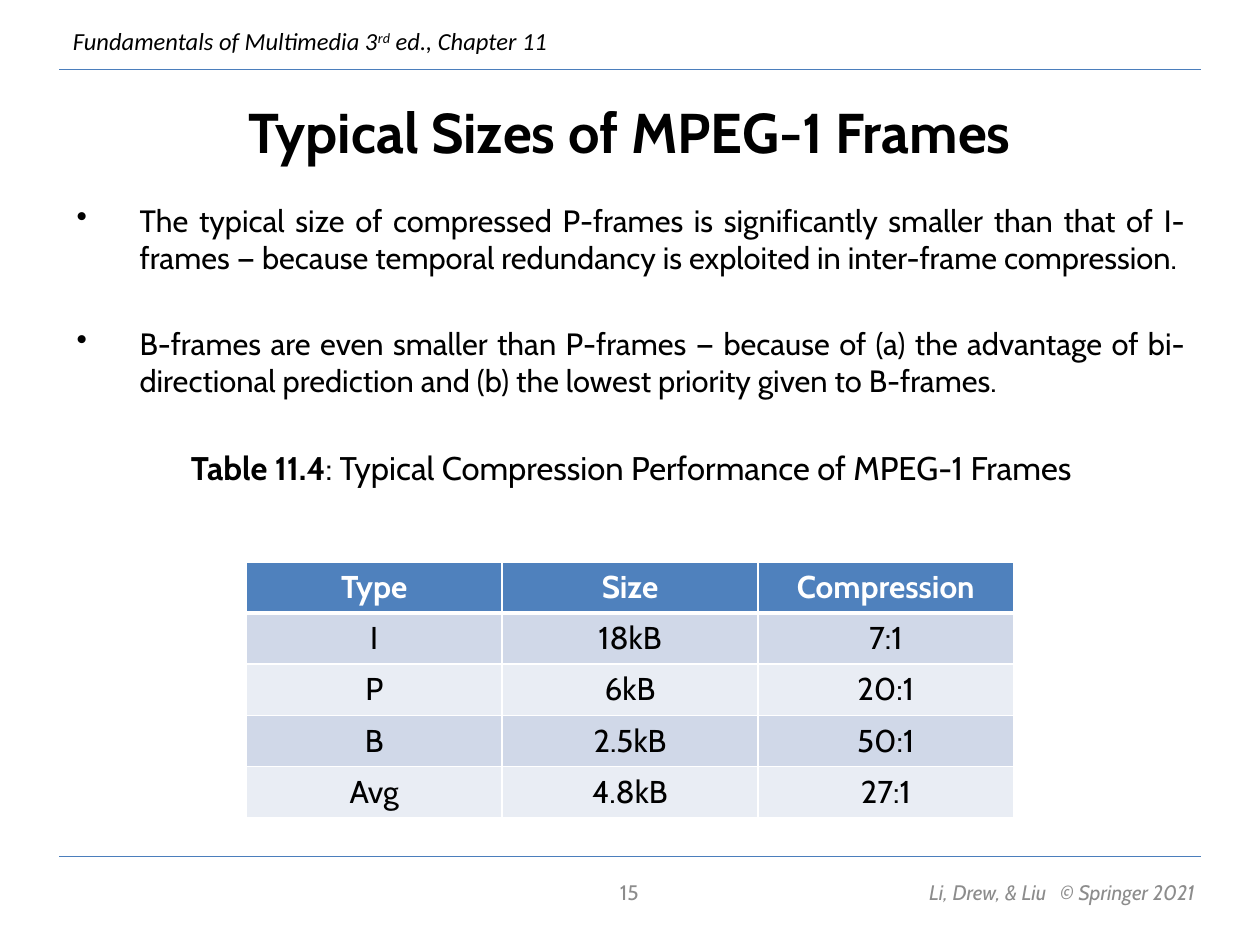
from lxml.etree import SubElement
from pptx import Presentation
from pptx.dml.color import RGBColor
from pptx.enum.shapes import MSO_CONNECTOR as Connector
from pptx.enum.text import MSO_ANCHOR as Anchor, PP_ALIGN as Align
from pptx.oxml.ns import qn
from pptx.util import Inches, Pt

WIDTH, HEIGHT = 10, 7.5
BLACK, WHITE, GREY = "000000", "FFFFFF", "8C8C8C"
RULE_BLUE, HEADER_BLUE = "4B7EBC", "4F81BD"
BANDS = ("D0D8E8", "E9EDF4")
FRAME_SIZES = (
    ("Type", "Size", "Compression"),
    ("I", "18kB", "7:1"),
    ("P", "6kB", "20:1"),
    ("B", "2.5kB", "50:1"),
    ("Avg", "4.8kB", "27:1"),
)
POINTS = (
    "The typical size of compressed P-frames is significantly smaller than that of I-frames "
    "— because temporal redundancy is exploited in inter-frame compression.",
    "B-frames are even smaller than P-frames — because of (a) the advantage of bi-directional "
    "prediction and (b) the lowest priority given to B-frames.",
)


def colour(code):
    """Turn a hex string into a colour."""
    return RGBColor.from_string(code)


def add_run(paragraph, words, size, ink=BLACK, face="Cabin", bold=False, italic=False, **marks):
    """Append one styled run, with marks as extra run attributes."""
    run = paragraph.add_run()
    run.text = words
    font = run.font
    font.name, font.size, font.bold, font.italic = face, Pt(size), bold, italic
    font.color.rgb = colour(ink)
    for mark, value in marks.items():
        run._r.get_or_add_rPr().set(mark, value)


def add_text_frame(slide, left, top, width, height, anchor=Anchor.TOP, align=Align.LEFT, wrap=True):
    """Add a text box and return its frame."""
    frame = slide.shapes.add_textbox(*map(Inches, (left, top, width, height))).text_frame
    frame.word_wrap = wrap
    frame.vertical_anchor = anchor
    frame.paragraphs[0].alignment = align
    return frame


def add_rule(slide, y):
    """Draw a thin rule across the slide."""
    margin = 0.47
    rule = slide.shapes.add_connector(
        Connector.STRAIGHT, Inches(margin), Inches(y), Inches(WIDTH - margin), Inches(y))
    rule.line.color.rgb = colour(RULE_BLUE)
    rule.line.width = Pt(0.75)
    SubElement(rule._element.spPr, qn("a:effectLst"))


def add_body(slide):
    """Write the bulleted points and the table caption."""
    frame = add_text_frame(slide, 0.51, 1.55, 9, 2.6)
    for index, point in enumerate(POINTS):
        paragraph = frame.add_paragraph() if index else frame.paragraphs[0]
        paragraph.alignment = Align.JUSTIFY
        properties = paragraph._p.get_or_add_pPr()
        properties.set("marL", str(Inches(0.5)))
        properties.set("indent", str(Inches(-0.5)))
        SubElement(properties, qn("a:buChar"), char="•")
        if index:
            paragraph.space_before = Pt(28)
        add_run(paragraph, point, 17.6)
    caption = frame.add_paragraph()
    caption.alignment = Align.CENTER
    caption.space_before = Pt(28)
    add_run(caption, "Table 11.4", 18.7, bold=True)
    add_run(caption, ": Typical Compression Performance of MPEG-1 Frames", 18.7)


def add_border(cell, side, points):
    """Give one side of a cell a white border."""
    line = SubElement(cell._tc.get_or_add_tcPr(), qn(f"a:ln{side}"), w=str(Pt(points)))
    SubElement(SubElement(line, qn("a:solidFill")), qn("a:srgbClr"), val=WHITE)


def add_frame_table(slide):
    """Build the table of frame sizes with banded rows."""
    rows, columns = len(FRAME_SIZES), len(FRAME_SIZES[0])
    width, row_height = 6.09, 0.406
    table = slide.shapes.add_table(
        rows, columns, Inches((WIDTH - width) / 2), Inches(4.46),
        Inches(width), Inches(rows * row_height)).table
    table.first_row = table.horz_banding = False
    for row, values in enumerate(FRAME_SIZES):
        header = row == 0
        for column, value in enumerate(values):
            cell = table.cell(row, column)
            for side in "LRTB":
                thick = (row, side) in ((0, "B"), (1, "T"))
                add_border(cell, side, 3 if thick else 1)
            cell.fill.solid()
            cell.fill.fore_color.rgb = colour(HEADER_BLUE if header else BANDS[(row - 1) % 2])
            paragraph = cell.text_frame.paragraphs[0]
            paragraph.alignment = Align.CENTER
            add_run(paragraph, value, 18, WHITE if header else BLACK, bold=header)


def add_header(slide):
    """Write the book and chapter line."""
    book = add_text_frame(slide, 0.48, 0.16, 4.02, 0.34, wrap=False).paragraphs[0]
    style = {"size": 14, "face": "Calibri", "italic": True}
    add_run(book, "Fundamentals of Multimedia 3", **style)
    add_run(book, "rd", baseline="30000", **style)
    add_run(book, " ed., Chapter 11", **style)


def add_footer(slide):
    """Write the page number and the copyright line."""
    top, height = 6.88, 0.4
    credit = add_text_frame(slide, 6.41, top, 3.17, height, Anchor.MIDDLE, Align.RIGHT).paragraphs[0]
    add_run(credit, "Li, Drew, & Liu", 12, GREY, italic=True)
    add_run(credit, " ", 12, GREY, italic=True, spc="500")
    add_run(credit, "© Springer 2021", 12, GREY, italic=True)
    number = add_text_frame(slide, 3.83, top, 2.33, height, Anchor.MIDDLE, Align.CENTER).paragraphs[0]
    add_run(number, "15", 12, GREY)


def main():
    """Build the slide and save it."""
    deck = Presentation()
    deck.slide_width, deck.slide_height = Inches(WIDTH), Inches(HEIGHT)
    slide = deck.slides.add_slide(deck.slide_layouts[6])
    for y in (0.55, 6.8):
        add_rule(slide, y)
    add_header(slide)
    title = add_text_frame(slide, 0.5, 0.62, 9, 0.84, Anchor.MIDDLE, Align.CENTER).paragraphs[0]
    add_run(title, "Typical Sizes of MPEG-1 Frames", 32, bold=True)
    add_body(slide)
    add_footer(slide)
    add_frame_table(slide)
    deck.save("out.pptx")


if __name__ == "__main__":
    main()
